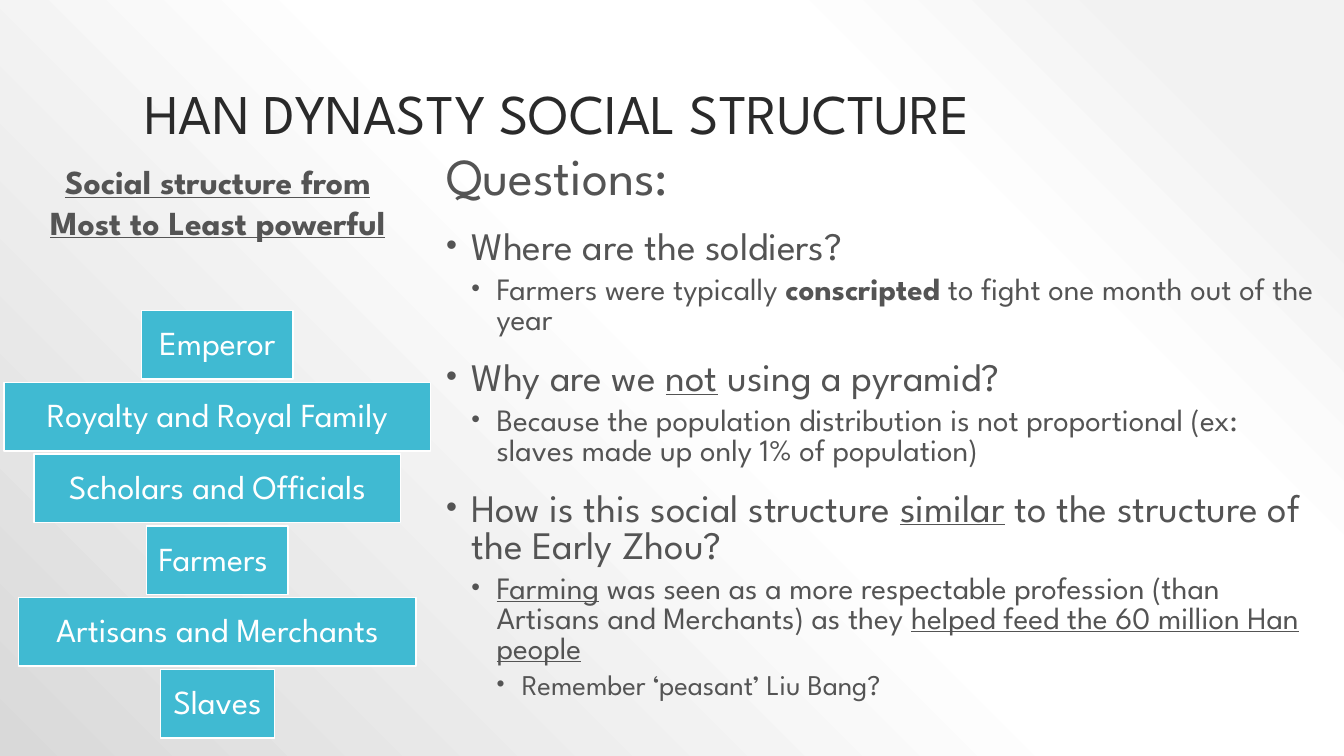
from lxml import etree
from pptx import Presentation
from pptx.dml.color import RGBColor
from pptx.enum.shapes import MSO_SHAPE
from pptx.enum.text import MSO_ANCHOR, PP_ALIGN
from pptx.oxml import parse_xml
from pptx.oxml.ns import nsdecls, qn
from pptx.util import Pt

FONT = "League Spartan"
TITLE_INK = RGBColor(0x2A, 0x2A, 0x2A)
BODY_INK = RGBColor(0x54, 0x54, 0x54)
TEAL = RGBColor(0x40, 0xBA, 0xD2)
WHITE = RGBColor(0xFF, 0xFF, 0xFF)
RECTANGLE = MSO_SHAPE.RECTANGLE
CENTER = PP_ALIGN.CENTER
TOP, MIDDLE, BOTTOM = MSO_ANCHOR.TOP, MSO_ANCHOR.MIDDLE, MSO_ANCHOR.BOTTOM

BACKDROP_STOPS = [(10, "F2F2F2"), (28, "FFFFFF"), (48, "FFFFFF"), (100, "D9D9D9")]

# Social classes from most to least powerful, with bar widths
CLASSES = [
    ("Emperor", 108),
    ("Royalty and Royal Family", 304.6),
    ("Scholars and Officials", 262),
    ("Farmers ", 101),
    ("Artisans and Merchants", 283.7),
    ("Slaves", 81.4),
]

# Outline level: size, space before, left margin, first-line indent
LEVELS = {
    "heading": (37, 0, 3.6, 0),
    "question": (27.8, 18, 21.6, -18),
    "answer": (22.2, 6, 39.6, -18),
    "aside": (20.4, 6, 57.6, -18),
}
DEPTH = {"answer": 1, "aside": 2}
PLAIN, BOLD, UNDERLINE = {}, {"bold": True}, {"underline": True}
QUESTIONS = [
    ("heading", [("Questions:", PLAIN)]),
    ("question", [("Where are the soldiers?", PLAIN)]),
    ("answer", [("Farmers were typically ", PLAIN), ("conscripted", BOLD),
                (" to fight one month out of the year", PLAIN)]),
    ("question", [("Why are we ", PLAIN), ("not", UNDERLINE),
                  (" using a pyramid?", PLAIN)]),
    ("answer", [("Because the population distribution is not proportional "
                 "(ex: slaves made up only 1% of population)", PLAIN)]),
    ("question", [("How is this social structure ", PLAIN), ("similar", UNDERLINE),
                  (" to the structure of the Early Zhou?", PLAIN)]),
    ("answer", [("Farming", UNDERLINE),
                (" was seen as a more respectable profession (than Artisans "
                 "and Merchants) as they ", PLAIN),
                ("helped feed the 60 million Han people", UNDERLINE)]),
    ("aside", [("Remember ‘peasant’ Liu Bang?", PLAIN)]),
]


def apply_format(target, values):
    for name, value in values.items():
        setattr(target, name, value)


def add_run(paragraph, text, size, color, style=PLAIN):
    run = paragraph.add_run()
    run.text = text
    apply_format(run.font, {"name": FONT, "size": Pt(size), **style})
    run.font.color.rgb = color


def add_text_frame(slide, box, anchor):
    frame = slide.shapes.add_textbox(*map(Pt, box)).text_frame
    apply_format(frame, {"word_wrap": True, "vertical_anchor": anchor})
    return frame


def paint_backdrop(slide):
    stops = "".join(
        f'<a:gs pos="{percent * 1000}"><a:srgbClr val="{color}"/></a:gs>'
        for percent, color in BACKDROP_STOPS)
    slide.element.cSld.insert(0, parse_xml(
        f'<p:bg {nsdecls("p", "a")}><p:bgPr><a:gradFill rotWithShape="1">'
        f'<a:gsLst>{stops}</a:gsLst><a:path path="circle">'
        '<a:fillToRect l="100000" t="0" r="0" b="100000"/></a:path>'
        '</a:gradFill><a:effectLst/></p:bgPr></p:bg>'))


def add_title(slide, box):
    paragraph = add_text_frame(slide, box, BOTTOM).paragraphs[0]
    paragraph.line_spacing = 0.9
    add_run(paragraph, "HAN DYNASTY SOCIAL STRUCTURE", 40, TITLE_INK)


def add_bullet(properties):
    color = etree.SubElement(properties, qn("a:buClr"))
    etree.SubElement(color, qn("a:srgbClr"), val=str(BODY_INK))
    etree.SubElement(properties, qn("a:buSzPct"), val="80000")
    etree.SubElement(properties, qn("a:buFont"), typeface="Arial")
    etree.SubElement(properties, qn("a:buChar"), char="•")


def add_questions(slide, box):
    frame = add_text_frame(slide, box, TOP)
    for index, (level, runs) in enumerate(QUESTIONS):
        size, before, margin, indent = LEVELS[level]
        paragraph = frame.add_paragraph() if index else frame.paragraphs[0]
        properties = paragraph._p.get_or_add_pPr()
        properties.set("marL", str(Pt(margin)))
        properties.set("indent", str(Pt(indent)))
        if level != "heading":
            add_bullet(properties)
        apply_format(paragraph, {"level": DEPTH.get(level, 0), "line_spacing": 0.8,
                                 "space_before": Pt(before)})
        for text, style in runs:
            add_run(paragraph, text, size, BODY_INK, style)


def add_ranking_heading(slide, box):
    paragraph = add_text_frame(slide, box, TOP).paragraphs[0]
    paragraph.alignment = CENTER
    add_run(paragraph, "Social structure from Most to Least powerful", 24,
            BODY_INK, BOLD | UNDERLINE)


def add_ranking(slide, box):
    left, top, width, height = box
    bar_height = 49
    pitch = (height - bar_height) / (len(CLASSES) - 1)
    inset = Pt(5)
    for rank, (name, bar_width) in enumerate(CLASSES):
        bar = slide.shapes.add_shape(
            RECTANGLE, Pt(left + (width - bar_width) / 2), Pt(top + rank * pitch),
            Pt(bar_width), Pt(bar_height))
        bar.shadow.inherit = False
        bar.fill.solid()
        bar.fill.fore_color.rgb = TEAL
        bar.line.color.rgb = WHITE
        bar.line.width = Pt(1)
        apply_format(bar.text_frame, {
            "word_wrap": True, "vertical_anchor": MIDDLE,
            "margin_left": inset, "margin_right": inset,
            "margin_top": inset, "margin_bottom": inset})
        paragraph = bar.text_frame.paragraphs[0]
        apply_format(paragraph, {"alignment": CENTER, "line_spacing": 0.9})
        add_run(paragraph, name, 24, WHITE)


def main():
    deck = Presentation()
    apply_format(deck, {"slide_width": Pt(960), "slide_height": Pt(540)})
    slide = deck.slides.add_slide(deck.slide_layouts[6])
    paint_backdrop(slide)
    add_title(slide, (96, 21.6, 768, 86.4))
    add_questions(slide, (308, 108, 639.4, 419))
    add_ranking(slide, (3, 221.8, 304.6, 305.3))
    add_ranking_heading(slide, (21.6, 111.6, 267.8, 65.5))
    deck.save("out.pptx")


if __name__ == "__main__":
    main()
